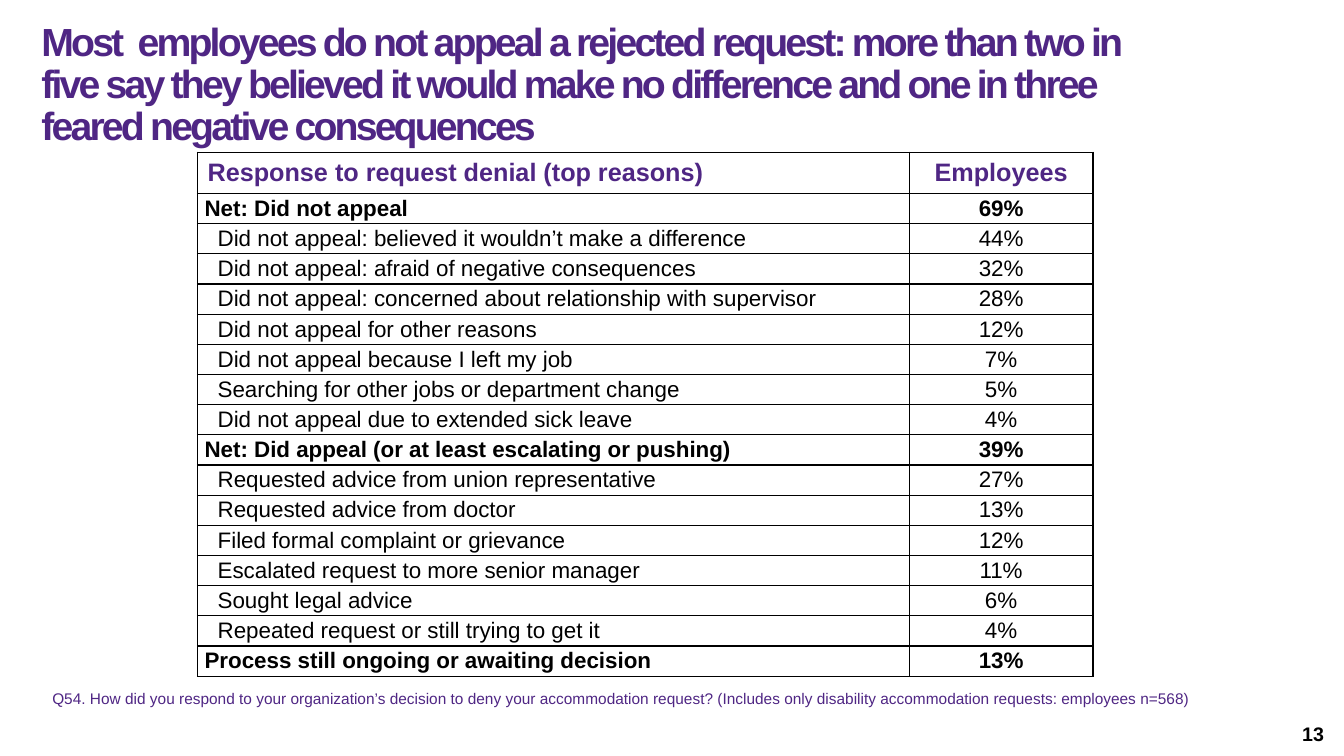
from dataclasses import dataclass

from lxml import etree
from pptx import Presentation
from pptx.dml.color import RGBColor
from pptx.enum.text import MSO_ANCHOR, PP_ALIGN
from pptx.oxml.ns import qn
from pptx.slide import Slide
from pptx.table import Table, _Cell
from pptx.text.text import TextFrame, _Paragraph
from pptx.util import Inches, Pt

LEFT, CENTER, RIGHT = PP_ALIGN.LEFT, PP_ALIGN.CENTER, PP_ALIGN.RIGHT
TOP, MIDDLE = MSO_ANCHOR.TOP, MSO_ANCHOR.MIDDLE
SLIDE_WIDTH, SLIDE_HEIGHT = Inches(13.33), Inches(7.5)
TITLE_ONLY = 5


@dataclass(frozen=True)
class TextStyle:
    size: int
    color: str
    bold: bool = False
    tracking: int = 0


@dataclass(frozen=True)
class Theme:
    font: str
    rule: str
    title: TextStyle
    header: TextStyle
    net: TextStyle
    reason: TextStyle
    footnote: TextStyle
    page: TextStyle


PURPLE, BLACK = "4F2684", "000000"
THEME = Theme(
    font="Arial",
    rule=BLACK,
    title=TextStyle(28, PURPLE, True, -200),
    header=TextStyle(18, PURPLE, True),
    net=TextStyle(16, BLACK, True),
    reason=TextStyle(16, BLACK),
    footnote=TextStyle(11, PURPLE),
    page=TextStyle(14, BLACK, True),
)


@dataclass(frozen=True)
class Area:
    """Percentages of the slide's width and height."""

    left: float
    top: float
    width: float
    height: float

    def box(self) -> tuple[int, int, int, int]:
        return across(self.left), down(self.top), across(self.width), down(self.height)


@dataclass(frozen=True)
class Response:
    label: str
    share: int
    net: bool = False


TITLE_AREA = Area(3.08, 2.67, 84.92, 17.47)
TABLE_AREA = Area(14.7, 20.13, 66.62, 69.33)
FOOTNOTE_AREA = Area(3.15, 90.53, 89.57, 3.87)
PAGE_AREA = Area(76.74, 94.4, 22.51, 5.33)
LABEL_WIDTH = 52.96
HEADER_HEIGHT = 5.47

TITLE = (
    "Most  employees do not appeal a rejected request: more than two in five say they "
    "believed it would make no difference and one in three feared negative consequences"
)
FOOTNOTE = (
    "Q54. How did you respond to your organization’s decision to deny your accommodation "
    "request? (Includes only disability accommodation requests: employees n=568)"
)
HEADERS = ("Response to request denial (top reasons)", "Employees")
RESPONSES = (
    Response("Net: Did not appeal", 69, True),
    Response("Did not appeal: believed it wouldn’t make a difference", 44),
    Response("Did not appeal: afraid of negative consequences", 32),
    Response("Did not appeal: concerned about relationship with supervisor", 28),
    Response("Did not appeal for other reasons", 12),
    Response("Did not appeal because I left my job", 7),
    Response("Searching for other jobs or department change", 5),
    Response("Did not appeal due to extended sick leave", 4),
    Response("Net: Did appeal (or at least escalating or pushing)", 39, True),
    Response("Requested advice from union representative", 27),
    Response("Requested advice from doctor", 13),
    Response("Filed formal complaint or grievance", 12),
    Response("Escalated request to more senior manager", 11),
    Response("Sought legal advice", 6),
    Response("Repeated request or still trying to get it", 4),
    Response("Process still ongoing or awaiting decision", 13, True),
)


def across(percent: float) -> int:
    return round(SLIDE_WIDTH * percent / 100)


def down(percent: float) -> int:
    return round(SLIDE_HEIGHT * percent / 100)


def write(frame: TextFrame, text: str, style: TextStyle, align: PP_ALIGN = LEFT) -> _Paragraph:
    frame.text = text
    paragraph = frame.paragraphs[0]
    paragraph.alignment = align
    run = paragraph.runs[0]
    run.font.name = THEME.font
    run.font.size = Pt(style.size)
    run.font.bold = style.bold
    run.font.color.rgb = RGBColor.from_string(style.color)
    if style.tracking:
        run._r.get_or_add_rPr().set("spc", str(style.tracking))
    return paragraph


def indent(paragraph: _Paragraph, margin: int, first_line: int = 0) -> None:
    properties = paragraph._p.get_or_add_pPr()
    properties.set("marL", str(margin))
    properties.set("indent", str(first_line))


def rule_cell(cell: _Cell) -> None:
    properties = cell._tc.get_or_add_tcPr()
    for side in ("a:lnL", "a:lnR", "a:lnT", "a:lnB"):
        line = etree.SubElement(properties, qn(side), w=str(Pt(1)))
        solid = etree.SubElement(line, qn("a:solidFill"))
        etree.SubElement(solid, qn("a:srgbClr"), val=THEME.rule)
    cell.fill.background()
    cell.vertical_anchor = MIDDLE


def add_title(slide: Slide) -> None:
    title = slide.shapes.title
    title.left, title.top, title.width, title.height = TITLE_AREA.box()
    frame = title.text_frame
    frame.margin_left = frame.margin_right = 0
    frame.margin_top = frame.margin_bottom = Inches(0.02)
    frame.vertical_anchor = TOP
    frame.word_wrap = True
    write(frame, TITLE, THEME.title).line_spacing = 0.9


def fill_response(table: Table, row: int, response: Response) -> None:
    style = THEME.net if response.net else THEME.reason
    entries = ((response.label, LEFT), (f"{response.share}%", CENTER))
    for column, (text, align) in enumerate(entries):
        cell = table.cell(row, column)
        cell.margin_left = cell.margin_right = Inches(0.07)
        cell.margin_top = cell.margin_bottom = 0
        paragraph = write(cell.text_frame, text, style, align)
        paragraph.space_after = Pt(5.1)
        if column == 0 and not response.net:
            indent(paragraph, Inches(0.13))
        rule_cell(cell)


def add_responses(slide: Slide) -> None:
    frame = slide.shapes.add_table(len(RESPONSES) + 1, len(HEADERS), *TABLE_AREA.box())
    table = frame.table
    table.columns[0].width = across(LABEL_WIDTH)
    table.columns[1].width = across(TABLE_AREA.width - LABEL_WIDTH)
    table.rows[0].height = down(HEADER_HEIGHT)
    for column, (header, align) in enumerate(zip(HEADERS, (LEFT, CENTER))):
        cell = table.cell(0, column)
        write(cell.text_frame, header, THEME.header, align)
        rule_cell(cell)
    row_height = down((TABLE_AREA.height - HEADER_HEIGHT) / len(RESPONSES))
    for row, response in enumerate(RESPONSES, start=1):
        table.rows[row].height = row_height
        fill_response(table, row, response)


def add_text(slide: Slide, area: Area, text: str, style: TextStyle,
             align: PP_ALIGN = LEFT, anchor: MSO_ANCHOR = TOP) -> _Paragraph:
    frame = slide.shapes.add_textbox(*area.box()).text_frame
    frame.word_wrap = True
    frame.vertical_anchor = anchor
    return write(frame, text, style, align)


def main() -> None:
    deck = Presentation()
    deck.slide_width, deck.slide_height = SLIDE_WIDTH, SLIDE_HEIGHT
    slide = deck.slides.add_slide(deck.slide_layouts[TITLE_ONLY])
    add_title(slide)
    add_responses(slide)
    footnote = add_text(slide, FOOTNOTE_AREA, FOOTNOTE, THEME.footnote)
    indent(footnote, Inches(0.57), -Inches(0.57))
    add_text(slide, PAGE_AREA, "13", THEME.page, RIGHT, MIDDLE)
    deck.save("out.pptx")


if __name__ == "__main__":
    main()
